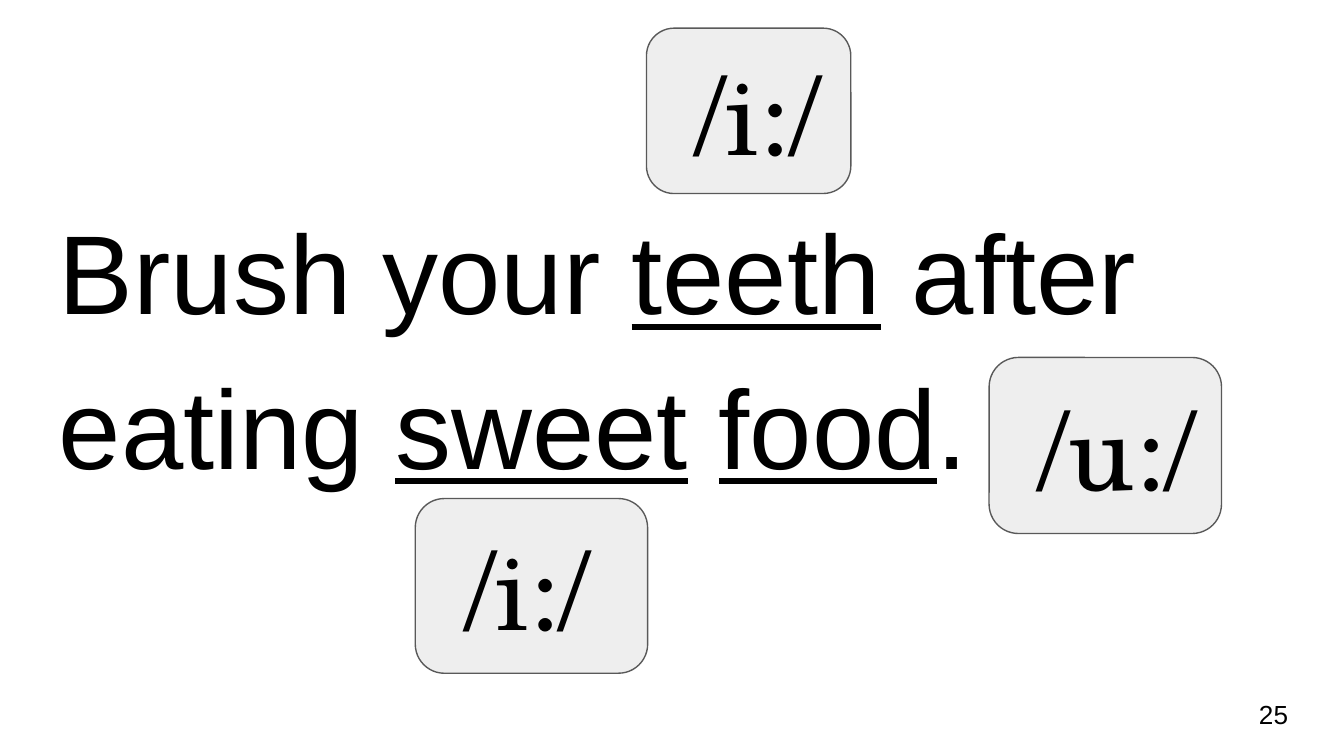
from pptx import Presentation
from pptx.dml.color import RGBColor
from pptx.enum.shapes import MSO_SHAPE
from pptx.enum.text import MSO_ANCHOR, PP_ALIGN
from pptx.util import Pt

# Content: sentence as (text, underlined); places as left, top, width, height
SENTENCE = [
    ("Brush your ", False), ("teeth", True), (" after eating ", False),
    ("sweet", True), (" ", False), ("food", True), (".", False),
]
SENTENCE_PLACE = (24.5, 90.7, 671, 269.3)
SOUND_CARDS = [
    ("/i:/", (222.5, 267.1, 124.5, 93.6)),
    ("/u:/", (529.9, 191.5, 124.5, 94.3)),
    ("/i:/", (346.3, 15.1, 109.5, 88.6)),
]
PAGE_NUMBER = ("25", (667.4, 367.2, 43.2, 31))

THEME = {
    "ink": RGBColor(0, 0, 0),
    "card": RGBColor(0xEE, 0xEE, 0xEE),
    "border": RGBColor(0x59, 0x59, 0x59),
    "sentence": {"name": "Arial", "size": Pt(60)},
    "gap": {"name": "Times New Roman", "size": Pt(60)},
    "sound": {"name": "TeX Gyre Schola", "size": Pt(58)},
    "number": {"name": "Arial", "size": Pt(14)},
}
FRAME = {"word_wrap": True, "margin_left": Pt(7.2), "margin_right": Pt(7.2),
         "margin_top": Pt(7.2), "margin_bottom": Pt(7.2)}


def apply(target, values):
    for name, value in values.items():
        setattr(target, name, value)


def write(shape, spans, anchor):
    """Fill the shape with one left-aligned paragraph of (text, style, underlined)."""
    apply(shape.text_frame, {**FRAME, "vertical_anchor": anchor})
    para = shape.text_frame.paragraphs[0]
    para.alignment = PP_ALIGN.LEFT
    for text, style, underlined in spans:
        span = para.add_run()
        span.text = text
        apply(span.font, {**THEME[style], "underline": underlined})
        span.font.color.rgb = THEME["ink"]
    return para


deck = Presentation()
apply(deck, {"slide_width": Pt(720), "slide_height": Pt(405)})
page = deck.slides.add_slide(deck.slide_layouts[6])

# Sentence
box = page.shapes.add_textbox(*map(Pt, SENTENCE_PLACE))
spans = [(text, "sentence", underlined) for text, underlined in SENTENCE]
para = write(box, spans, MSO_ANCHOR.TOP)
apply(para, {"line_spacing": 1.15, "space_after": Pt(16)})

# Sound cards
for sound, place in SOUND_CARDS:
    card = page.shapes.add_shape(MSO_SHAPE.ROUNDED_RECTANGLE, *map(Pt, place))
    card.shadow.inherit = False
    card.fill.solid()
    card.fill.fore_color.rgb = THEME["card"]
    card.line.color.rgb = THEME["border"]
    card.line.width = Pt(0.75)
    write(card, [(" ", "gap", False), (sound, "sound", False)], MSO_ANCHOR.MIDDLE)

# Page number
number, place = PAGE_NUMBER
box = page.shapes.add_textbox(*map(Pt, place))
write(box, [(number, "number", False)], MSO_ANCHOR.MIDDLE)

deck.save("out.pptx")
